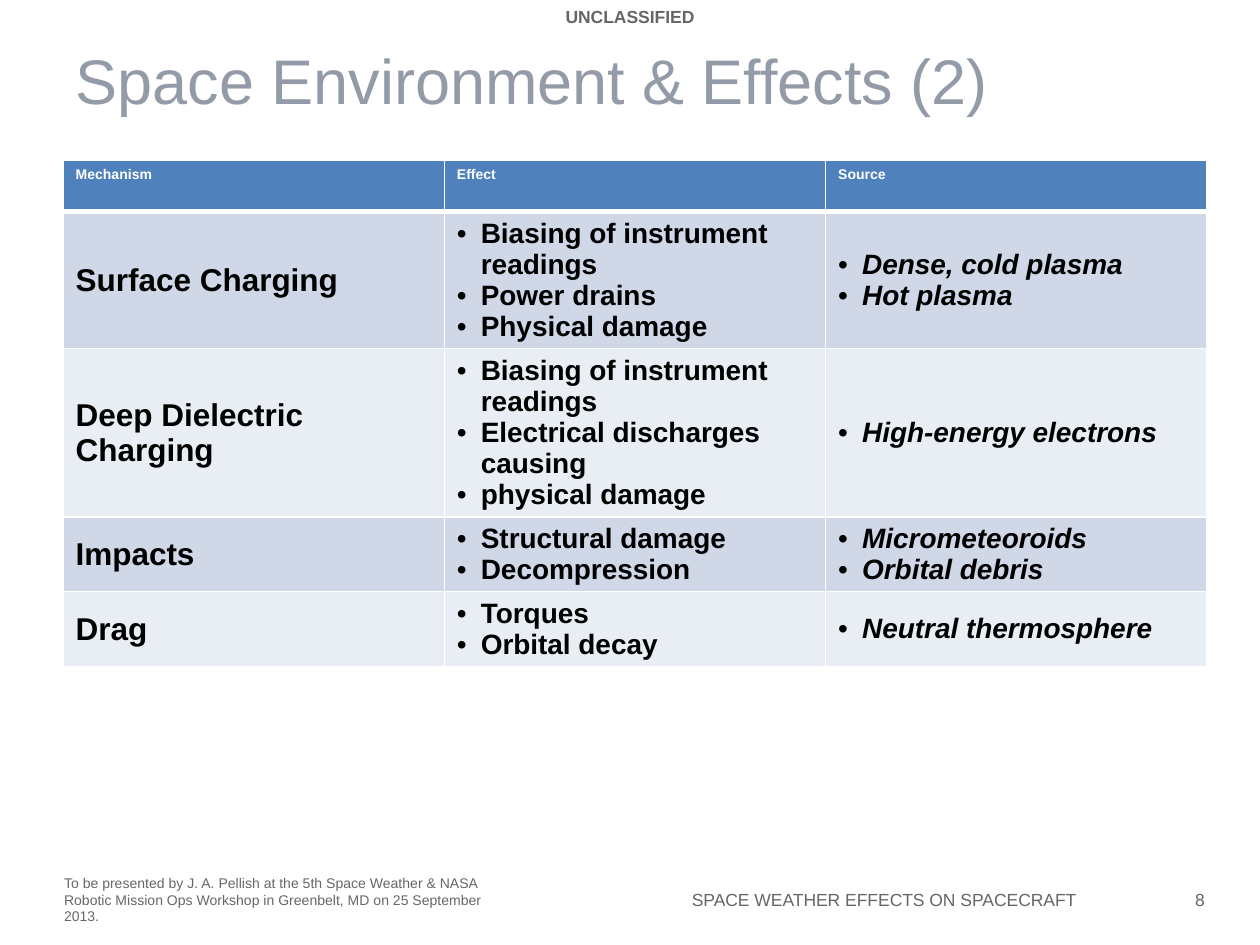
from lxml.etree import SubElement
from pptx import Presentation
from pptx.dml.color import RGBColor
from pptx.enum.text import MSO_ANCHOR, MSO_AUTO_SIZE, PP_ALIGN
from pptx.oxml.ns import qn
from pptx.util import Inches, Pt

WIDTH, HEIGHT = Inches(10), Inches(7.5)
COLUMNS, ROWS = 100, 75
GREY, WHITE, BLACK = "666666", "FFFFFF", "000000"
HEADER_FILL, BAND_FILLS = "4F81BD", ("D0D8E8", "E9EDF4")
ROW_HEIGHT = 4.1
BULLET_INDENT = Inches(0.19)

HEADINGS = ("Mechanism", "Effect", "Source")
MECHANISMS = (
    ("Surface Charging",
     ("Biasing of instrument readings", "Power drains", "Physical damage"),
     ("Dense, cold plasma", "Hot plasma")),
    ("Deep Dielectric Charging",
     ("Biasing of instrument readings", "Electrical discharges causing", "physical damage"),
     ("High-energy electrons",)),
    ("Impacts",
     ("Structural damage", "Decompression"),
     ("Micrometeoroids", "Orbital debris")),
    ("Drag",
     ("Torques", "Orbital decay"),
     ("Neutral thermosphere",)),
)
HEADING_FORMAT = {"size": Pt(8), "bold": True}
COLUMN_FORMATS = (
    {"size": Pt(18), "bold": True},
    {"size": Pt(16), "bold": True},
    {"size": Pt(16), "bold": True, "italic": True},
)


def rgb(value):
    """Turn a hex string into a colour."""
    return RGBColor.from_string(value)


def across(columns):
    """Give the length of a number of grid columns."""
    return round(WIDTH * columns / COLUMNS)


def down(rows):
    """Give the length of a number of grid rows."""
    return round(HEIGHT * rows / ROWS)


def place(box):
    """Turn a box in grid units into left, top, width and height."""
    left, top, width, height = box
    return across(left), down(top), across(width), down(height)


def set_values(target, values):
    """Set each attribute named in a dict."""
    for name, value in values.items():
        setattr(target, name, value)


def format_font(font, color, values):
    """Apply the slide typeface, a colour and format values."""
    set_values(font, {"name": "Arial", **values})
    font.color.rgb = rgb(color)


def add_bullet(paragraph):
    """Give a paragraph a hanging round bullet."""
    properties = paragraph._p.get_or_add_pPr()
    properties.set("marL", str(BULLET_INDENT))
    properties.set("indent", str(-BULLET_INDENT))
    SubElement(properties, qn("a:buFont"), typeface="Arial")
    SubElement(properties, qn("a:buChar"), char="•")


def add_borders(cell, bottom_width):
    """Draw white borders, with a chosen width at the bottom."""
    properties = cell._tc.get_or_add_tcPr()
    widths = {"a:lnL": 1, "a:lnR": 1, "a:lnT": 1, "a:lnB": bottom_width}
    for position, (tag, width) in enumerate(widths.items()):
        line = SubElement(properties, qn(tag), w=str(Pt(width)))
        fill = SubElement(line, qn("a:solidFill"))
        SubElement(fill, qn("a:srgbClr"), val=WHITE)
        properties.insert(position, line)


def fill_cell(cell, lines, fill, color, values, anchor, bulleted=False, bottom_width=1):
    """Write and format one table cell."""
    cell.fill.solid()
    cell.fill.fore_color.rgb = rgb(fill)
    cell.vertical_anchor = anchor
    add_borders(cell, bottom_width)
    cell.text = "\n".join(lines)
    for paragraph in cell.text_frame.paragraphs:
        if bulleted:
            add_bullet(paragraph)
        format_font(paragraph.runs[0].font, color, values)


def add_effects_table(slide, box):
    """Add the table of mechanisms, effects and sources."""
    frame = slide.shapes.add_table(len(MECHANISMS) + 1, len(HEADINGS), *place(box))
    table = frame.table
    for row in table.rows:
        row.height = down(ROW_HEIGHT)
    frame.height = down(box[3])
    for column, heading in enumerate(HEADINGS):
        fill_cell(table.cell(0, column), [heading], HEADER_FILL, WHITE,
                  HEADING_FORMAT, MSO_ANCHOR.TOP, bottom_width=3)
    for row, (mechanism, effects, sources) in enumerate(MECHANISMS, 1):
        for column, lines in enumerate(([mechanism], effects, sources)):
            fill_cell(table.cell(row, column), lines, BAND_FILLS[(row - 1) % 2], BLACK,
                      COLUMN_FORMATS[column], MSO_ANCHOR.MIDDLE, bulleted=column > 0)


def add_title(slide, box):
    """Place and format the title placeholder."""
    title = slide.shapes.title
    set_values(title, dict(zip(("left", "top", "width", "height"), place(box))))
    title.text = "Space Environment & Effects (2)"
    set_values(title.text_frame, {"vertical_anchor": MSO_ANCHOR.MIDDLE,
                                  "auto_size": MSO_AUTO_SIZE.NONE})
    paragraph = title.text_frame.paragraphs[0]
    paragraph.alignment = PP_ALIGN.LEFT
    format_font(paragraph.runs[0].font, "939BA8", {"size": Pt(36)})


def add_label(slide, box, text, alignment, values, anchor=MSO_ANCHOR.MIDDLE, wrap=True):
    """Add one line of grey marginal text."""
    frame = slide.shapes.add_textbox(*place(box)).text_frame
    set_values(frame, {"word_wrap": wrap, "vertical_anchor": anchor, "text": text})
    paragraph = frame.paragraphs[0]
    paragraph.alignment = alignment
    format_font(paragraph.runs[0].font, GREY, values)


def add_footer(slide, box):
    """Add the event note, the running title and the page number."""
    left, top, width, height = box
    add_label(slide, (left, top, 37.9, height),
              "To be presented by J. A. Pellish at the 5th Space Weather & NASA Robotic "
              "Mission Ops Workshop in Greenbelt, MD on 25 September 2013.",
              PP_ALIGN.LEFT, {"size": Pt(8)}, MSO_ANCHOR.TOP)
    number_left = left + width - 9.4
    add_label(slide, (number_left, top + 0.6, 9.4, 3.8), "8",
              PP_ALIGN.RIGHT, {"size": Pt(10)})
    add_label(slide, (number_left - 36.6, top + 0.5, 35.8, 3.9),
              "SPACE WEATHER EFFECTS ON SPACECRAFT", PP_ALIGN.RIGHT, {"size": Pt(10)})


def main():
    """Build and save the slide."""
    presentation = Presentation()
    set_values(presentation, {"slide_width": WIDTH, "slide_height": HEIGHT})
    slide = presentation.slides.add_slide(presentation.slide_layouts[5])
    add_title(slide, (5, 1.7, 90.8, 9.2))
    add_effects_table(slide, (5, 12.7, 90.8, 42.7))
    add_footer(slide, (4.1, 68.9, 92.5, 5))
    add_label(slide, (43.8, 0, 12.4, 2.7), "UNCLASSIFIED", PP_ALIGN.CENTER,
              {"size": Pt(10), "bold": True}, MSO_ANCHOR.TOP, wrap=False)
    presentation.save("out.pptx")


if __name__ == "__main__":
    main()
